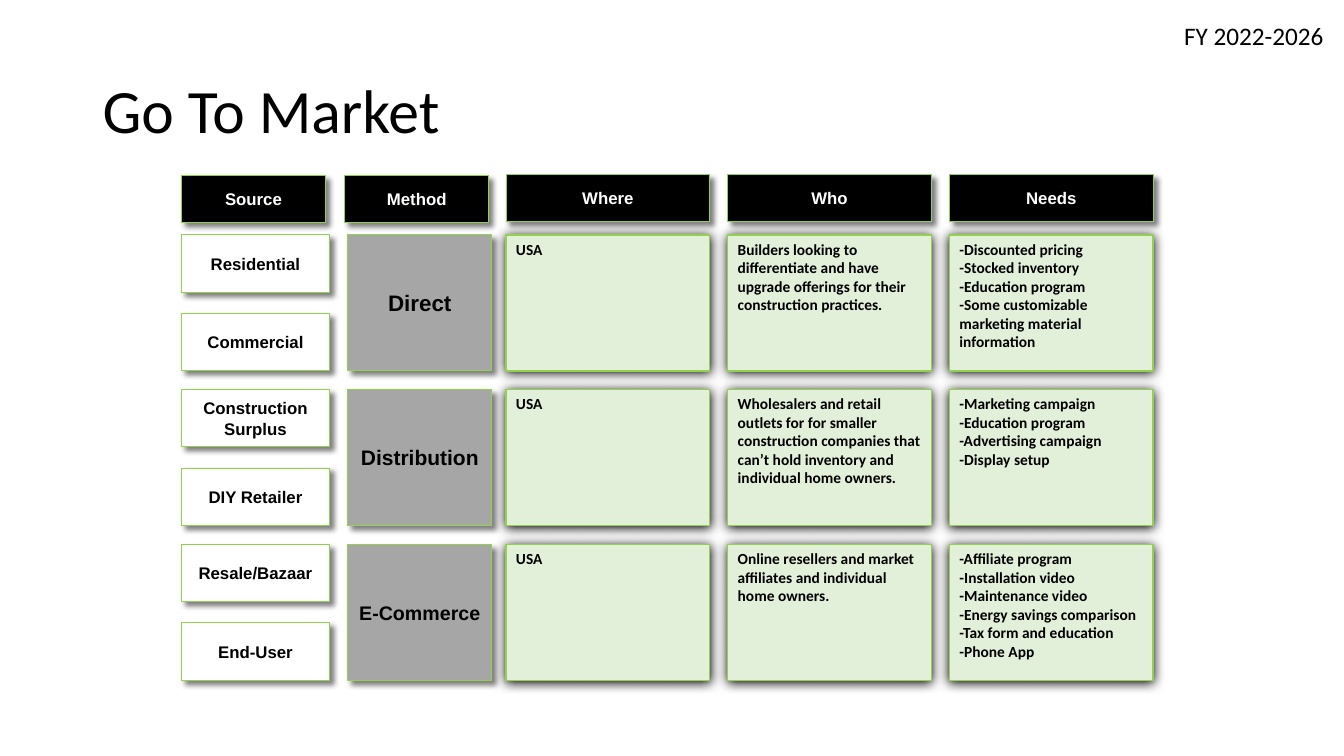
from lxml.etree import SubElement
from pptx import Presentation
from pptx.dml.color import RGBColor
from pptx.enum.shapes import MSO_SHAPE
from pptx.enum.text import MSO_ANCHOR, MSO_AUTO_SIZE, PP_ALIGN
from pptx.oxml.ns import qn
from pptx.util import Pt

BLACK = RGBColor(0x00, 0x00, 0x00)
WHITE = RGBColor(0xFF, 0xFF, 0xFF)
GRAY = RGBColor(0xA6, 0xA6, 0xA6)
PALE_GREEN = RGBColor(0xE2, 0xF0, 0xD9)
GREEN = RGBColor(0x92, 0xD0, 0x50)

# Shadow styles: blur and distance in points, direction in degrees, opacity in percent
SOFT_SHADOW = (4, 4, 45, 50)
DEEP_SHADOW = (8.5, 1, 90, 100)

HEADER_HEIGHT = 33.84
ROW_TOP, ROW_PITCH, ROW_HEIGHT = 167.76, 110.5, 97.2
SOURCE_LEFT, SOURCE_WIDTH, SOURCE_HEIGHT = 129.6, 105.84, 41.04
METHOD_LEFT, METHOD_WIDTH = 248.4, 102.96
DETAIL_LEFT, DETAIL_PITCH, DETAIL_WIDTH = 361.44, 158.4, 145.44

HEADERS = [
    ("Source", 129.6, 125.28, METHOD_WIDTH),
    ("Method", 246.24, 125.28, METHOD_WIDTH),
] + [
    (name, DETAIL_LEFT + column * DETAIL_PITCH, 124.56, DETAIL_WIDTH)
    for column, name in enumerate(("Where", "Who", "Needs"))
]

# Each row: sources, method, method text size, details (where, who, needs)
CHANNELS = [
    (("Residential", "Commercial"), "Direct", 16, (
        "USA",
        "Builders looking to differentiate and have upgrade offerings "
        "for their construction practices.",
        "-Discounted pricing\n-Stocked inventory\n-Education program\n"
        "-Some customizable marketing material information")),
    (("Construction Surplus", "DIY Retailer"), "Distribution", 15, (
        "USA",
        "Wholesalers and retail outlets for for smaller construction companies "
        "that can’t hold inventory and individual home owners.",
        "-Marketing campaign\n-Education program\n-Advertising campaign\n-Display setup")),
    (("Resale/Bazaar", "End-User"), "E-Commerce", 14, (
        "USA",
        "Online resellers and market affiliates and individual home owners.",
        "-Affiliate program\n-Installation video\n-Maintenance video\n"
        "-Energy savings comparison\n-Tax form and education\n-Phone App")),
]


def write_text(shape, text, size, font="Arial", color=BLACK, bold=True, wrap=True,
               align=PP_ALIGN.CENTER, anchor=MSO_ANCHOR.MIDDLE, line_spacing=None):
    """Fill a shape with one paragraph per line of text."""
    frame = shape.text_frame
    frame.word_wrap = wrap
    frame.vertical_anchor = anchor
    frame.text = text
    for paragraph in frame.paragraphs:
        paragraph.alignment = align
        paragraph.line_spacing = line_spacing
        paragraph.font.size = Pt(size)
        paragraph.font.name = font
        paragraph.font.bold = bold
        paragraph.font.color.rgb = color


def add_box(left, top, width, height, fill, line_width=0.75, shadow=SOFT_SHADOW):
    """Add a filled, green-edged rectangle with an outer shadow."""
    shape = slide.shapes.add_shape(
        MSO_SHAPE.RECTANGLE, Pt(left), Pt(top), Pt(width), Pt(height))
    shape.fill.solid()
    shape.fill.fore_color.rgb = fill
    shape.line.color.rgb = GREEN
    shape.line.width = Pt(line_width)
    shape.shadow.inherit = False
    blur, distance, direction, opacity = shadow
    effects = shape.element.spPr.find(qn("a:effectLst"))
    outer = SubElement(effects, qn("a:outerShdw"), blurRad=str(Pt(blur)),
                       dist=str(Pt(distance)), dir=str(direction * 60000),
                       algn="ctr", rotWithShape="0")
    color = SubElement(outer, qn("a:srgbClr"), val=str(BLACK))
    SubElement(color, qn("a:alpha"), val=str(opacity * 1000))
    return shape


presentation = Presentation()
presentation.slide_width = Pt(960)
presentation.slide_height = Pt(540)
slide = presentation.slides.add_slide(presentation.slide_layouts[6])

title = slide.shapes.add_textbox(Pt(66.24), Pt(28.8), Pt(828), Pt(104.4))
write_text(title, "Go To Market", 44, font="Calibri", bold=False,
           align=PP_ALIGN.LEFT, line_spacing=0.9)

period = slide.shapes.add_textbox(Pt(838.8), Pt(10.8), Pt(115.2), Pt(28.8))
write_text(period, "FY 2022-2026", 18, font="Calibri", bold=False, wrap=False,
           align=PP_ALIGN.LEFT, anchor=MSO_ANCHOR.TOP)
period.text_frame.auto_size = MSO_AUTO_SIZE.SHAPE_TO_FIT_TEXT

for name, left, top, width in HEADERS:
    header = add_box(left, top, width, HEADER_HEIGHT, BLACK)
    write_text(header, name, 12, color=WHITE)

for row, (sources, method, method_size, details) in enumerate(CHANNELS):
    top = ROW_TOP + row * ROW_PITCH

    for index, source in enumerate(sources):
        source_top = top + index * (ROW_HEIGHT - SOURCE_HEIGHT)
        source_box = add_box(SOURCE_LEFT, source_top, SOURCE_WIDTH, SOURCE_HEIGHT, WHITE)
        write_text(source_box, source, 12)

    method_box = add_box(METHOD_LEFT, top, METHOD_WIDTH, ROW_HEIGHT, GRAY)
    write_text(method_box, method, method_size)

    for column, detail in enumerate(details):
        detail_box = add_box(DETAIL_LEFT + column * DETAIL_PITCH, top, DETAIL_WIDTH,
                             ROW_HEIGHT, PALE_GREEN, line_width=1, shadow=DEEP_SHADOW)
        write_text(detail_box, detail, 11, font="Calibri",
                   align=PP_ALIGN.LEFT, anchor=MSO_ANCHOR.TOP)

presentation.save("out.pptx")
